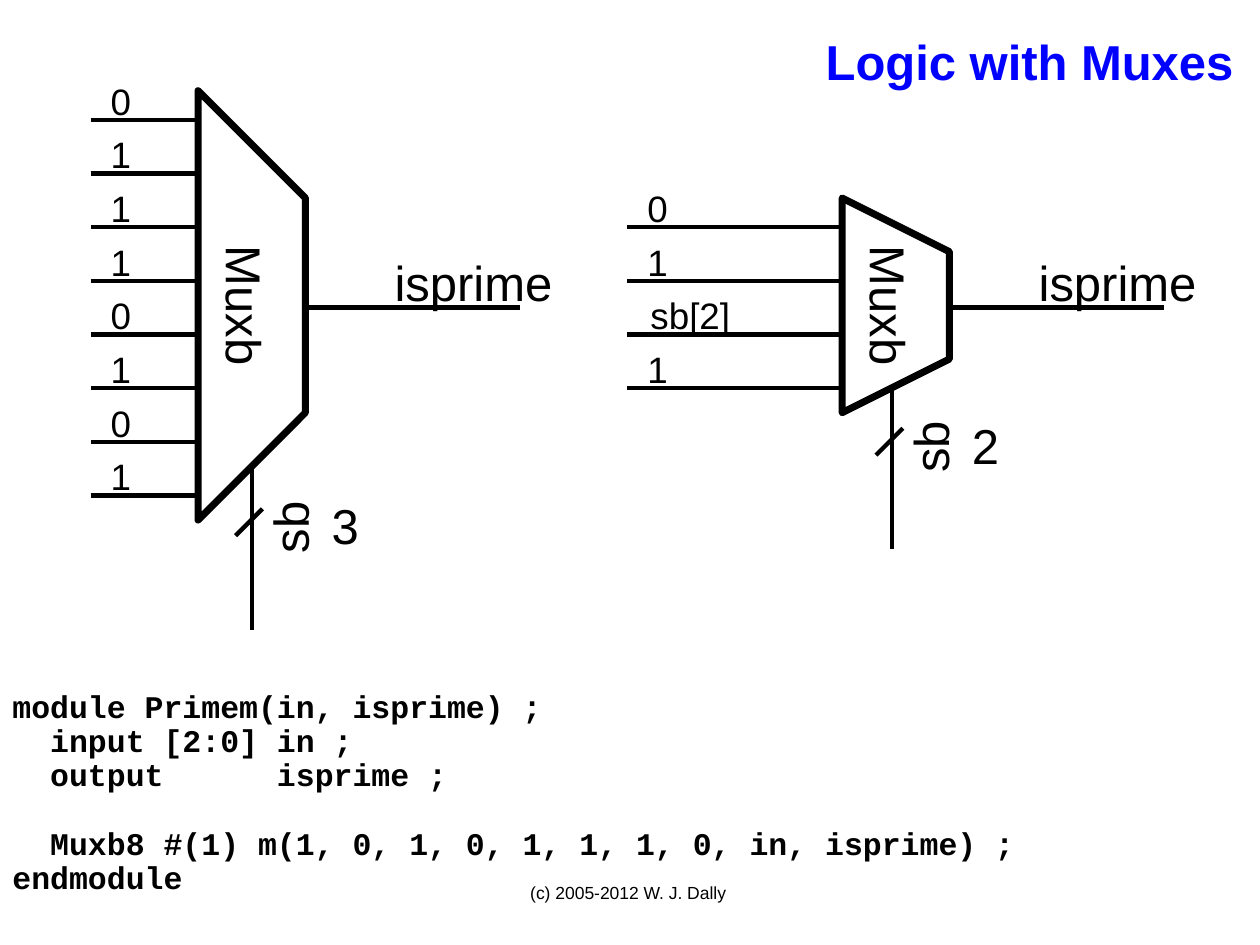
from dataclasses import dataclass

from lxml.etree import SubElement
from pptx import Presentation
from pptx.dml.color import RGBColor
from pptx.enum.shapes import MSO_CONNECTOR
from pptx.enum.text import MSO_ANCHOR, PP_ALIGN
from pptx.oxml.ns import qn
from pptx.util import Inches, Pt


@dataclass(frozen=True)
class Theme:
    ink: RGBColor = RGBColor(0, 0, 0)
    title: RGBColor = RGBColor(0, 0, 255)
    sans: str = "Arial"
    mono: str = "Courier New"
    large: int = 28
    input: int = 21
    code: int = 18
    footer: int = 10
    wire: float = 2.5
    outline: float = 4


@dataclass(frozen=True)
class Mux:
    column: float
    top: float
    inset: float
    inputs: tuple
    input_column: float
    select_column: float
    select_row: float
    select_bits: str


THEME = Theme()
WIDTH, HEIGHT = 10, 7.5
ORIGIN, UNIT = 0.72, 0.426
MUX_COLUMNS = 2
OUTPUT_COLUMNS = 4
MIDDLE_ROW = 4
WIRE_DROP = 0.04

MUXES = (
    Mux(2, 0, 2, ("0", "1", "1", "1", "0", "1", "0", "1"), 0, 3, 7.04, "3"),
    Mux(14, 2, 1, ("0", "1", "sb[2]", "1"), 10, 14.93, 5.54, "2"),
)
TEXT_WIDTHS = {"sb[2]": 0.75, "isprime": 1.4, "Muxb": 1.1, "sb": 0.5}
CODE = (
    "module Primem(in, isprime) ;",
    "\tinput [2:0] in ;",
    "\toutput\tisprime ;",
    "\tMuxb8 #(1) m(1, 0, 1, 0, 1, 1, 1, 0, in, isprime) ;",
    "endmodule",
)
CODE_TABS = (0.3, 2.1)
CODE_GAPS = {3: 20}
NO_MARGINS = {f"margin_{side}": 0 for side in ("left", "top", "right", "bottom")}


def grid(position):
    return Inches(ORIGIN + position * UNIT)


def apply_format(target, values):
    for name, value in values.items():
        setattr(target, name, value)


def add_text(slide, box, lines, size, frame_format=None, paragraph_format=None,
             font_format=None, color=THEME.ink):
    shape = slide.shapes.add_textbox(*(Inches(length) for length in box))
    frame = shape.text_frame
    apply_format(frame, {"word_wrap": False, **(frame_format or {})})
    for index, line in enumerate(lines):
        paragraph = frame.add_paragraph() if index else frame.paragraphs[0]
        apply_format(paragraph, paragraph_format or {})
        run = paragraph.add_run()
        run.text = line
        run.font.color.rgb = color
        apply_format(run.font, {"name": THEME.sans, "size": Pt(size),
                                **(font_format or {})})
    return shape


def add_label(slide, column, row, text, size=THEME.large, rotation=0):
    width, height = TEXT_WIDTHS.get(text, size / 100), size / 60
    left = ORIGIN + column * UNIT - width / 2
    top = ORIGIN + row * UNIT - height / 2
    shape = add_text(slide, (left, top, width, height), [text], size,
                     {**NO_MARGINS, "vertical_anchor": MSO_ANCHOR.BOTTOM},
                     {"alignment": PP_ALIGN.CENTER})
    shape.rotation = rotation


def add_wire(slide, start, end):
    wire = slide.shapes.add_connector(
        MSO_CONNECTOR.STRAIGHT, *(grid(position) for position in (*start, *end)))
    wire.line.color.rgb = THEME.ink
    wire.line.width = Pt(THEME.wire)
    SubElement(wire._element.spPr, qn("a:effectLst"))


def add_outline(slide, points):
    corners = [(grid(column), grid(row)) for column, row in points]
    builder = slide.shapes.build_freeform(*corners[0])
    builder.add_line_segments(corners[1:], close=True)
    shape = builder.convert_to_shape()
    shape.shadow.inherit = False
    shape.fill.background()
    shape.line.color.rgb = THEME.ink
    shape.line.width = Pt(THEME.outline)
    SubElement(shape.line._get_or_add_ln(), qn("a:round"))


def add_inputs(slide, mux):
    for index, text in enumerate(mux.inputs):
        row = mux.top + index + 0.5 + WIRE_DROP
        add_wire(slide, (mux.input_column, row), (mux.column, row))
        offset = 0.56 if len(text) == 1 else 1.17
        add_label(slide, mux.input_column + offset, row - 0.36, text, THEME.input)


def add_select(slide, mux):
    column, row = mux.select_column, mux.select_row
    add_wire(slide, (column, row + 3), (column, row))
    slash_column, slash_row = column - 0.05, row + 1
    add_wire(slide, (slash_column - 0.25, slash_row + 0.25),
             (slash_column + 0.25, slash_row - 0.25))
    add_label(slide, column + 0.7, row + 1.09, "sb", rotation=270)
    add_label(slide, column + 1.74, row + 1.05, mux.select_bits)


def add_mux(slide, mux):
    right, bottom = mux.column + MUX_COLUMNS, mux.top + len(mux.inputs)
    add_inputs(slide, mux)
    add_outline(slide, ((right, bottom - mux.inset), (right, mux.top + mux.inset),
                        (mux.column, mux.top), (mux.column, bottom)))
    add_select(slide, mux)
    output_row = MIDDLE_ROW + WIRE_DROP
    add_wire(slide, (right, output_row), (right + OUTPUT_COLUMNS, output_row))
    add_label(slide, right + 3.13, 3.56, "isprime")
    add_label(slide, mux.column + 0.88, MIDDLE_ROW, "Muxb", rotation=90)


def add_title(slide):
    add_text(slide, (0.645 * WIDTH, 0.033 * HEIGHT, 0.334 * WIDTH, 0.47),
             ["Logic with Muxes"], THEME.large,
             {**NO_MARGINS, "vertical_anchor": MSO_ANCHOR.BOTTOM},
             {"alignment": PP_ALIGN.RIGHT}, {"bold": True}, THEME.title)


def add_code(slide):
    shape = add_text(slide, (0, 0.725 * HEIGHT, WIDTH, 0.23 * HEIGHT), CODE,
                     THEME.code, {"word_wrap": True}, {"line_spacing": 0.9},
                     {"name": THEME.mono, "bold": True})
    for index, paragraph in enumerate(shape.text_frame.paragraphs):
        if index in CODE_GAPS:
            paragraph.space_before = Pt(CODE_GAPS[index])
        tabs = SubElement(paragraph._p.get_or_add_pPr(), qn("a:tabLst"))
        for position in CODE_TABS:
            SubElement(tabs, qn("a:tab"), pos=str(Inches(position)), algn="l")


def add_footer(slide):
    add_text(slide, (0.34 * WIDTH, 0.911 * HEIGHT, 0.317 * WIDTH, 0.5),
             ["(c) 2005-2012 W. J. Dally"], THEME.footer,
             {"vertical_anchor": MSO_ANCHOR.MIDDLE},
             {"alignment": PP_ALIGN.CENTER})


def main():
    presentation = Presentation()
    apply_format(presentation, {"slide_width": Inches(WIDTH),
                                "slide_height": Inches(HEIGHT)})
    slide = presentation.slides.add_slide(presentation.slide_layouts[6])
    add_code(slide)
    for mux in MUXES:
        add_mux(slide, mux)
    add_title(slide)
    add_footer(slide)
    presentation.save("out.pptx")


if __name__ == "__main__":
    main()
